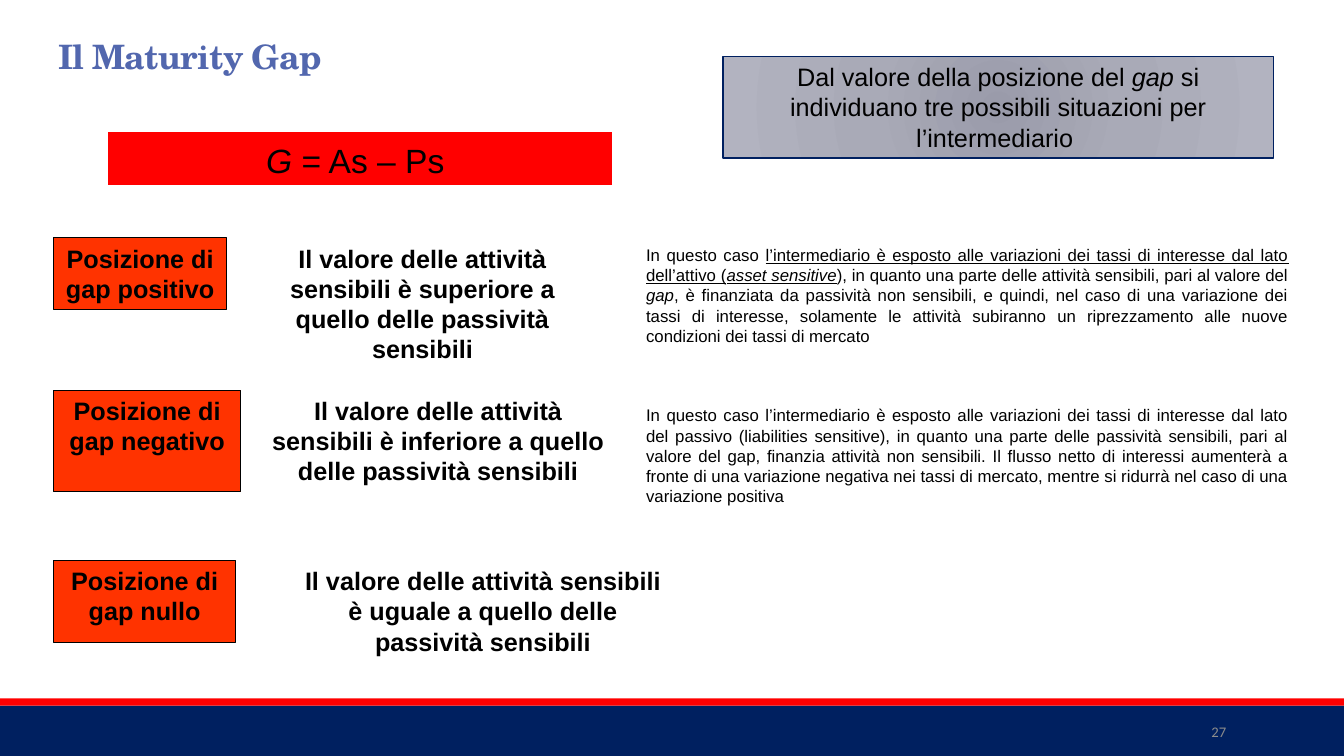
"""Builds the Maturity Gap slide: gap formula and the three gap positions."""
from pptx import Presentation
from pptx.dml.color import RGBColor
from pptx.enum.shapes import MSO_SHAPE
from pptx.enum.text import MSO_ANCHOR, PP_ALIGN
from pptx.oxml import parse_xml
from pptx.oxml.ns import nsdecls
from pptx.util import Inches, Pt

THEME = {
    "navy": "002060", "red": "FF0000", "label": "FF3300", "title": "5267AE",
    "black": "000000", "white": "FFFFFF", "grey": "8C8C8C",
    "gradient": [(0, "9A9BAA"), (45, "A9AAB7"), (100, "B2B3C0")],
    "body": "Arial", "heading": "TeX Gyre Schola", "number": "Calibri",
    "large": 24, "medium": 18, "small": 12, "tiny": 10.5,
}

TITLE = "Il Maturity Gap"
PAGE = "27"
FORMULA = [("G", "i"), (" = As – Ps ", "")]
INTRO = [
    ("Dal valore della posizione del ", ""), ("gap", "i"),
    (" si individuano tre possibili situazioni per l’intermediario ", ""),
]
POSITIONS = [
    ("Posizione di gap positivo", (0.53, 2.36, 1.72, 0.71),
     "Il valore delle attività sensibili è superiore a quello delle passività sensibili",
     (2.72, 2.36, 2.94, 1.31)),
    ("Posizione di gap negativo", (0.53, 3.87, 1.86, 1.01),
     "Il valore delle attività sensibili è inferiore a quello delle passività sensibili",
     (2.6, 3.87, 3.49, 1.31)),
    ("Posizione di gap nullo", (0.53, 5.56, 1.81, 0.81),
     "Il valore delle attività sensibili è uguale a quello delle passività sensibili",
     (2.84, 5.56, 3.9, 1.05)),
]
EXPLANATIONS = [
    (2.38, [
        ("In questo caso ", ""),
        ("l’intermediario è esposto alle variazioni dei tassi di interesse dal lato "
         "dell’attivo (", "u"),
        ("asset sensitive", "iu"),
        ("), in quanto una parte delle attività sensibili, pari al valore del ", ""),
        ("gap", "i"),
        (", è finanziata da passività non sensibili, e quindi, nel caso di una variazione "
         "dei tassi di interesse, solamente le attività subiranno un riprezzamento alle "
         "nuove condizioni dei tassi di mercato ", ""),
    ]),
    (3.97, [
        ("In questo caso l’intermediario è esposto alle variazioni dei tassi di interesse "
         "dal lato del passivo (liabilities sensitive), in quanto una parte delle passività "
         "sensibili, pari al valore del gap, finanzia attività non sensibili. Il flusso netto "
         "di interessi aumenterà a fronte di una variazione negativa nei tassi di mercato, "
         "mentre si ridurrà nel caso di una variazione positiva", ""),
    ]),
]


def color(name):
    return RGBColor.from_string(THEME[name])


def add_box(shapes, at, fill=None, line=None, width=0.75):
    sp = shapes.add_shape(MSO_SHAPE.RECTANGLE, *map(Inches, at))
    sp.shadow.inherit = False
    if fill:
        sp.fill.solid()
        sp.fill.fore_color.rgb = color(fill)
    else:
        sp.fill.background()
    if line:
        sp.line.color.rgb = color(line)
        sp.line.width = Pt(width)
    else:
        sp.line.fill.background()
    return sp


def add_text(shapes, at, *args, **kwargs):
    return write(shapes.add_textbox(*map(Inches, at)), *args, **kwargs)


def write(sp, runs, size, align=PP_ALIGN.CENTER, font="body", ink="black",
          bold=False, spacing=None, anchor=MSO_ANCHOR.TOP):
    tf = sp.text_frame
    tf.word_wrap = True
    tf.vertical_anchor = anchor
    p = tf.paragraphs[0]
    p.alignment = align
    if spacing:
        p.line_spacing = spacing
    p.font.name = THEME[font]
    p.font.size = Pt(THEME[size])
    p.font.bold = bold
    p.font.color.rgb = color(ink)
    for text, marks in runs:
        r = p.add_run()
        r.text = text
        if "i" in marks:
            r.font.italic = True
        if "u" in marks:
            r.font.underline = True
    return p


def fill_radial(sp, stops):
    gs = "".join(f'<a:gs pos="{pos * 1000}"><a:srgbClr val="{rgb}"/></a:gs>'
                 for pos, rgb in stops)
    grad = parse_xml(
        f'<a:gradFill {nsdecls("a")} rotWithShape="1"><a:gsLst>{gs}</a:gsLst>'
        '<a:path path="circle"><a:fillToRect l="100000" t="100000" r="100000" b="100000"/>'
        '</a:path></a:gradFill>')
    spPr = sp.element.spPr
    spPr.replace(spPr.find("{*}noFill"), grad)


def main():
    prs = Presentation()
    prs.slide_width, prs.slide_height = Inches(13.33), Inches(7.5)
    s = prs.slides.add_slide(prs.slide_layouts[6])
    shapes = s.shapes

    add_box(shapes, (0, 7, 13.33, 0.5), "navy")
    add_box(shapes, (0, 6.93, 13.33, 0.07), "red")
    add_text(shapes, (10.83, 7.06, 1.43, 0.4), [(PAGE, "")], "tiny", PP_ALIGN.RIGHT,
             "number", "grey", anchor=MSO_ANCHOR.MIDDLE)
    p = add_text(shapes, (0.48, 0.37, 8.62, 0.5), [(TITLE, "")], "large", PP_ALIGN.LEFT,
                 "heading", "title", bold=True, spacing=0.85)
    p.runs[0].font._element.set("spc", "-50")

    formula = add_box(shapes, (1.06, 1.3, 5.02, 0.55), "red", "white", 2)
    write(formula, FORMULA, "large", spacing=1.1)
    intro = add_box(shapes, (7.17, 0.56, 5.46, 1.01), line="navy", width=1)
    fill_radial(intro, THEME["gradient"])
    write(intro, INTRO, "medium")

    for label, label_at, meaning, meaning_at in POSITIONS:
        group = shapes.add_group_shape().shapes
        write(add_box(group, label_at, "label", "black"), [(label, "")], "medium", bold=True)
        add_text(group, meaning_at, [(meaning, "")], "medium", bold=True)
    for top, runs in EXPLANATIONS:
        add_text(shapes, (6.31, top, 6.57, 1.11), runs, "small", PP_ALIGN.JUSTIFY)

    prs.save("out.pptx")


if __name__ == "__main__":
    main()
